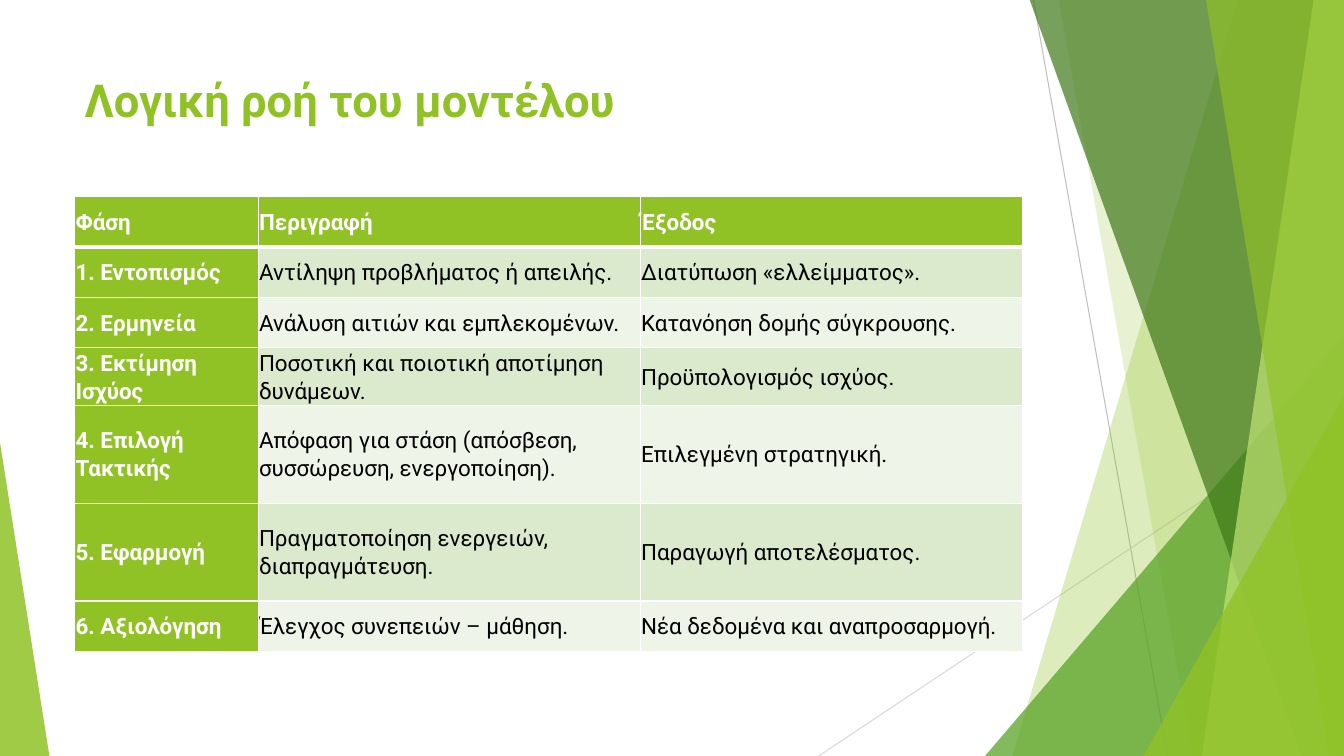
from pptx import Presentation
from pptx.dml.color import RGBColor
from pptx.enum import shapes, text
from pptx.oxml import ns
from pptx.util import Inches, Pt
from lxml import etree

FONT = "Roboto"
GREEN, WHITE, BLACK = "90C226", "FFFFFF", "000000"
BANDS = ("DBE9CD", "EEF4E8")
TOP, RIGHT, BOTTOM = -0.01, 13.33, 7.5

COLUMN_WIDTHS = (1.82, 3.79, 3.79)
ROW_HEIGHTS = (0.5, 0.5, 0.5, 0.5, 0.97, 0.97, 0.5)
ROWS = (
    ("Φάση", "Περιγραφή", "Έξοδος"),
    ("1. Εντοπισμός", "Αντίληψη προβλήματος ή απειλής.", "Διατύπωση «ελλείμματος»."),
    ("2. Ερμηνεία", "Ανάλυση αιτιών και εμπλεκομένων.", "Κατανόηση δομής σύγκρουσης."),
    ("3. Εκτίμηση Ισχύος", "Ποσοτική και ποιοτική αποτίμηση δυνάμεων.", "Προϋπολογισμός ισχύος."),
    ("4. Επιλογή Τακτικής", "Απόφαση για στάση (απόσβεση, συσσώρευση, ενεργοποίηση).",
     "Επιλεγμένη στρατηγική."),
    ("5. Εφαρμογή", "Πραγματοποίηση ενεργειών, διαπραγμάτευση.", "Παραγωγή αποτελέσματος."),
    ("6. Αξιολόγηση", "Έλεγχος συνεπειών – μάθηση.", "Νέα δεδομένα και αναπροσαρμογή."),
)


def rgb(color):
    """Turn a hex string into a colour."""
    return RGBColor.from_string(color)


def write(frame, content, *, size, color, bold=False, spacing=None, after=None):
    """Put one formatted, left-aligned paragraph into a text frame."""
    frame.word_wrap = True
    paragraph = frame.paragraphs[0]
    paragraph.alignment = text.PP_ALIGN.LEFT
    paragraph.line_spacing = spacing
    paragraph.space_after = after
    run = paragraph.add_run()
    run.text = content
    run.font.name = FONT
    run.font.size = Pt(size)
    run.font.bold = bold
    run.font.color.rgb = rgb(color)


def paint(shape, color, opacity):
    """Give a shape a translucent fill without outline or shadow."""
    shape.shadow.inherit = False
    shape.fill.solid()
    shape.fill.fore_color.rgb = rgb(color)
    shape.line.fill.background()
    fill_color = shape._element.spPr.find(ns.qn("a:solidFill")).find(ns.qn("a:srgbClr"))
    etree.SubElement(fill_color, ns.qn("a:alpha"), val=str(opacity * 1000))


def add_hairline(slide, start, end, color):
    """Draw a thin straight line between two points."""
    line = slide.shapes.add_connector(
        shapes.MSO_CONNECTOR.STRAIGHT, *(Inches(value) for value in start + end))
    line.line.color.rgb = rgb(color)
    line.line.width = Pt(0.75)
    etree.SubElement(line._element.spPr, ns.qn("a:effectLst"))


def add_shard(slide, top_left, bottom_left, color, opacity):
    """Draw a full-height band from a slanted left edge to the slide's right edge."""
    corners = [(Inches(x), Inches(y)) for x, y in (
        (top_left, TOP), (RIGHT, TOP), (RIGHT, BOTTOM), (bottom_left, BOTTOM))]
    builder = slide.shapes.build_freeform(*corners[0], scale=1.0)
    builder.add_line_segments(corners[1:], close=True)
    paint(builder.convert_to_shape(), color, opacity)


def add_corner(slide, left, top, width, apex, color, opacity):
    """Draw a right triangle standing on the slide's bottom edge."""
    triangle = slide.shapes.add_shape(
        shapes.MSO_SHAPE.ISOSCELES_TRIANGLE,
        Inches(left), Inches(top), Inches(width), Inches(BOTTOM - top))
    triangle.adjustments[0] = apex
    paint(triangle, color, opacity)


def add_decoration(slide):
    """Draw the green facets at both sides of the slide."""
    add_hairline(slide, (10.25, 0), (11.58, BOTTOM), "BFBFBF")
    add_hairline(slide, (RIGHT, 4.03), (8.12, BOTTOM), "D9D9D9")
    add_shard(slide, 12.28, 10.04, GREEN, 30)
    add_shard(slide, 10.5, 11.83, GREEN, 20)
    add_corner(slide, 9.77, 3.33, 3.56, 1, "54A021", 72)
    add_shard(slide, 10.21, 12.91, "3F7819", 70)
    add_shard(slide, 13.03, 11.92, "C0E474", 70)
    add_shard(slide, 11.96, 13.18, GREEN, 65)
    add_corner(slide, 11.34, 3.93, 1.99, 1, GREEN, 80)
    add_corner(slide, 0, 4.39, 0.49, 0, GREEN, 85)


def add_title(slide, content):
    """Place and fill the title placeholder."""
    title = slide.shapes.title
    title.left, title.top = Inches(0.74), Inches(0.67)
    title.width, title.height = Inches(9.4), Inches(1.44)
    title.text_frame.vertical_anchor = text.MSO_ANCHOR.TOP
    title.text_frame.auto_size = text.MSO_AUTO_SIZE.NONE
    write(title.text_frame, content, size=32.4, color=GREEN, bold=True)


def set_borders(cell, top, bottom):
    """Draw white cell borders, with the given top and bottom widths in points."""
    properties = cell._tc.get_or_add_tcPr()
    widths = {"a:lnL": 1, "a:lnR": 1, "a:lnT": top, "a:lnB": bottom}
    for position, (tag, width) in enumerate(widths.items()):
        border = etree.Element(ns.qn(tag), w=str(Pt(width)))
        fill = etree.SubElement(border, ns.qn("a:solidFill"))
        etree.SubElement(fill, ns.qn("a:srgbClr"), val=WHITE)
        properties.insert(position, border)


def format_cell(cell, content, row, column):
    """Fill a cell and format it as a heading or as body text."""
    heading = row == 0 or column == 0
    cell.margin_left = cell.margin_right = Inches(0.01)
    cell.margin_top = cell.margin_bottom = Inches(0.01)
    cell.vertical_anchor = text.MSO_ANCHOR.MIDDLE
    cell.fill.solid()
    cell.fill.fore_color.rgb = rgb(GREEN if heading else BANDS[(row - 1) % 2])
    set_borders(cell, top=3 if row == 1 else 1, bottom=3 if row == 0 else 1)
    write(cell.text_frame, content, size=16, color=WHITE if heading else BLACK,
          bold=heading, spacing=1.07, after=Pt(8))


def add_phase_table(slide):
    """Add the table of the model's phases."""
    table = slide.shapes.add_table(
        len(ROWS), len(COLUMN_WIDTHS), Inches(0.74), Inches(1.95),
        Inches(sum(COLUMN_WIDTHS)), Inches(sum(ROW_HEIGHTS))).table
    table.first_col = True
    for column, width in zip(table.columns, COLUMN_WIDTHS):
        column.width = Inches(width)
    for row, height in zip(table.rows, ROW_HEIGHTS):
        row.height = Inches(height)
    for row, entries in enumerate(ROWS):
        for column, content in enumerate(entries):
            format_cell(table.cell(row, column), content, row, column)


def main():
    """Build and save the slide."""
    presentation = Presentation()
    presentation.slide_width = Inches(RIGHT)
    presentation.slide_height = Inches(BOTTOM)
    slide = presentation.slides.add_slide(presentation.slide_layouts[5])
    add_decoration(slide)
    add_title(slide, "Λογική ροή του μοντέλου")
    add_phase_table(slide)
    presentation.save("out.pptx")


if __name__ == "__main__":
    main()
